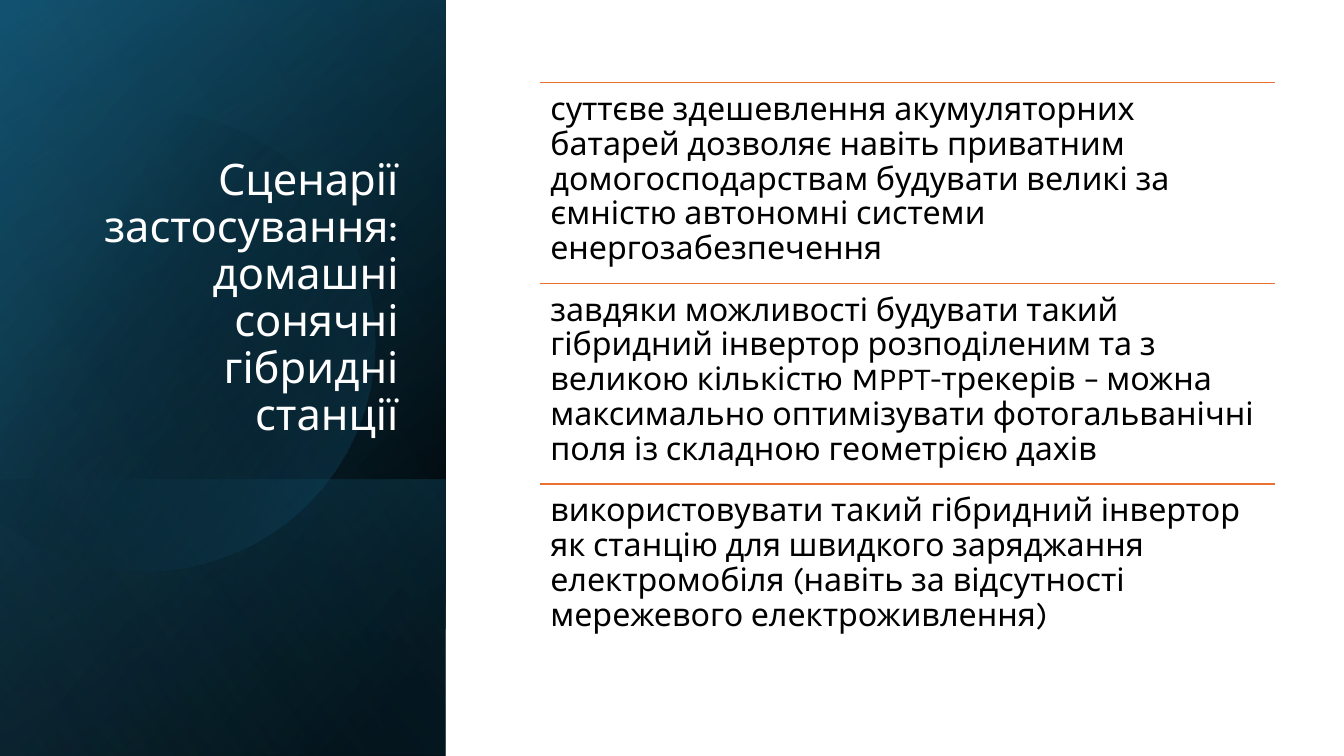
import dataclasses

import lxml.etree
import pptx
import pptx.dml.color
import pptx.enum.shapes
import pptx.enum.text
import pptx.oxml
import pptx.oxml.ns
import pptx.util

Inches = pptx.util.Inches
Pt = pptx.util.Pt
qn = pptx.oxml.ns.qn


@dataclasses.dataclass(frozen=True)
class Theme:
    font: str = "Karla"
    title_size: float = 31
    body_size: float = 23
    rule_width: float = 1
    spacing: float = 0.9
    black: str = "000000"
    white: str = "FFFFFF"
    navy: str = "104862"
    teal: str = "156082"
    sky: str = "46B1E1"
    orange: str = "E97132"


THEME = Theme()
TITLE = "Сценарії застосування: домашні сонячні гібридні станції"
BENEFITS = [
    "суттєве здешевлення акумуляторних батарей дозволяє навіть приватним "
    "домогосподарствам будувати великі за ємністю автономні системи енергозабезпечення",
    "завдяки можливості будувати такий гібридний інвертор розподіленим та з великою "
    "кількістю MPPT-трекерів – можна максимально оптимізувати фотогальванічні поля "
    "із складною геометрією дахів",
    "використовувати такий гібридний інвертор як станцію для швидкого заряджання "
    "електромобіля (навіть за відсутності мережевого електроживлення)",
]
# Each curve: two control points and an end point, in inches on the page.
GLOW_START = (1.49, 1.1)
GLOW_RIGHT = [
    ((2.46, 1.12), (3.35, 1.77), (3.63, 2.75)),
    ((3.98, 3.97), (3.28, 5.23), (2.07, 5.58)),
    ((1.31, 5.8), (0.53, 5.61), (-0.03, 5.14)),
]
GLOW_EDGE = [(-0.15, 5.03), (-0.15, 1.75), (0, 1.61)]
GLOW_TOP = [
    ((0.23, 1.42), (0.5, 1.28), (0.8, 1.19)),
    ((1.03, 1.13), (1.26, 1.1), GLOW_START),
]


def color(value):
    return pptx.dml.color.RGBColor.from_string(value)


def paint_gradient(shape, stops, angle):
    """Fill with (position %, colour, opacity %) stops; angle is clockwise."""
    shape.shadow.inherit = False
    shape.line.fill.background()
    shape.fill.background()
    properties = shape._element.spPr
    gradient = lxml.etree.Element(qn("a:gradFill"), rotWithShape="1")
    stop_list = lxml.etree.SubElement(gradient, qn("a:gsLst"))
    for position, value, opacity in stops:
        stop = lxml.etree.SubElement(stop_list, qn("a:gs"), pos=str(position * 1000))
        tint = lxml.etree.SubElement(stop, qn("a:srgbClr"), val=value)
        lxml.etree.SubElement(tint, qn("a:alpha"), val=str(opacity * 1000))
    lxml.etree.SubElement(gradient, qn("a:lin"), ang=str(angle * 60000), scaled="0")
    properties.replace(properties.find(qn("a:noFill")), gradient)


def add_layer(page, box, stops, angle):
    """Cover the box with a mirrored rectangle turned a quarter."""
    left, top, width, height = box
    shape = page.shapes.add_shape(
        pptx.enum.shapes.MSO_SHAPE.RECTANGLE,
        Inches(left + (width - height) / 2), Inches(top + (height - width) / 2),
        Inches(height), Inches(width))
    shape.rotation = 90
    shape._element.spPr.find(qn("a:xfrm")).set("flipH", "1")
    paint_gradient(shape, stops, angle)


def curve_points(start, curves, steps=16):
    points = []
    for first, second, end in curves:
        for step in range(1, steps + 1):
            t = step / steps
            weights = ((1 - t) ** 3, 3 * t * (1 - t) ** 2, 3 * t * t * (1 - t), t ** 3)
            points.append(tuple(
                sum(weight * value for weight, value in zip(weights, values))
                for values in zip(start, first, second, end)))
        start = end
    return points


def add_glow(page, left, top):
    outline = (curve_points(GLOW_START, GLOW_RIGHT) + GLOW_EDGE
               + curve_points(GLOW_EDGE[-1], GLOW_TOP))
    points = [(Inches(left + x), Inches(top + y)) for x, y in outline]
    builder = page.shapes.build_freeform(
        Inches(left + GLOW_START[0]), Inches(top + GLOW_START[1]))
    builder.add_line_segments(points, close=True)
    paint_gradient(builder.convert_to_shape(),
                   [(29, THEME.black, 0), (100, THEME.teal, 43)], 30)


def add_text(page, box, text, size, value, anchor, align):
    left, top, width, height = box
    frame = page.shapes.add_textbox(
        Inches(left), Inches(top), Inches(width), Inches(height)).text_frame
    margin = Inches(0.1)
    frame_format = {"word_wrap": True, "vertical_anchor": anchor,
                    "margin_left": margin, "margin_right": margin,
                    "margin_top": margin, "margin_bottom": margin}
    for name, setting in frame_format.items():
        setattr(frame, name, setting)
    para = frame.paragraphs[0]
    para.alignment = align
    para.line_spacing = THEME.spacing
    span = para.add_run()
    span.text = text
    for name, setting in {"name": THEME.font, "size": Pt(size)}.items():
        setattr(span.font, name, setting)
    span.font.color.rgb = color(value)


def add_rule(page, left, top, width):
    rule = page.shapes.add_connector(
        pptx.enum.shapes.MSO_CONNECTOR.STRAIGHT,
        Inches(left), Inches(top), Inches(left + width), Inches(top))
    rule.line.color.rgb = color(THEME.orange)
    rule.line.width = Pt(THEME.rule_width)
    lxml.etree.SubElement(rule._element.spPr, qn("a:effectLst"))


def add_title_panel(page, box):
    left, top, width, height = box
    shade = 2.74
    add_layer(page, box, [(8, THEME.black, 100), (100, THEME.navy, 100)], 50)
    add_layer(page, box, [(0, THEME.black, 0), (99, THEME.teal, 46)], 30)
    add_layer(page, (left, top + height - shade, width, shade),
              [(2, THEME.teal, 29), (100, THEME.black, 30)], 130)
    add_glow(page, left, top)
    add_layer(page, box, [(0, THEME.black, 0), (99, THEME.sky, 11)], 120)
    add_text(page, (left + 0.64, top + 1.84, 3.41, 2.62), TITLE,
             THEME.title_size, THEME.white,
             pptx.enum.text.MSO_ANCHOR.BOTTOM, pptx.enum.text.PP_ALIGN.RIGHT)


def add_benefits(page, box):
    left, top, width, height = box
    row = height / len(BENEFITS)
    for index, benefit in enumerate(BENEFITS):
        row_top = top + index * row
        add_rule(page, left, row_top, width)
        add_text(page, (left, row_top, width, row), benefit,
                 THEME.body_size, THEME.black,
                 pptx.enum.text.MSO_ANCHOR.TOP, pptx.enum.text.PP_ALIGN.LEFT)


def main():
    deck = pptx.Presentation()
    deck.slide_width, deck.slide_height = Inches(13.33), Inches(7.5)
    page = deck.slides.add_slide(deck.slide_layouts[6])
    add_title_panel(page, (0, 0, 4.42, 7.5))
    add_benefits(page, (5.36, 0.82, 7.29, 5.97))
    deck.save("out.pptx")


if __name__ == "__main__":
    main()
